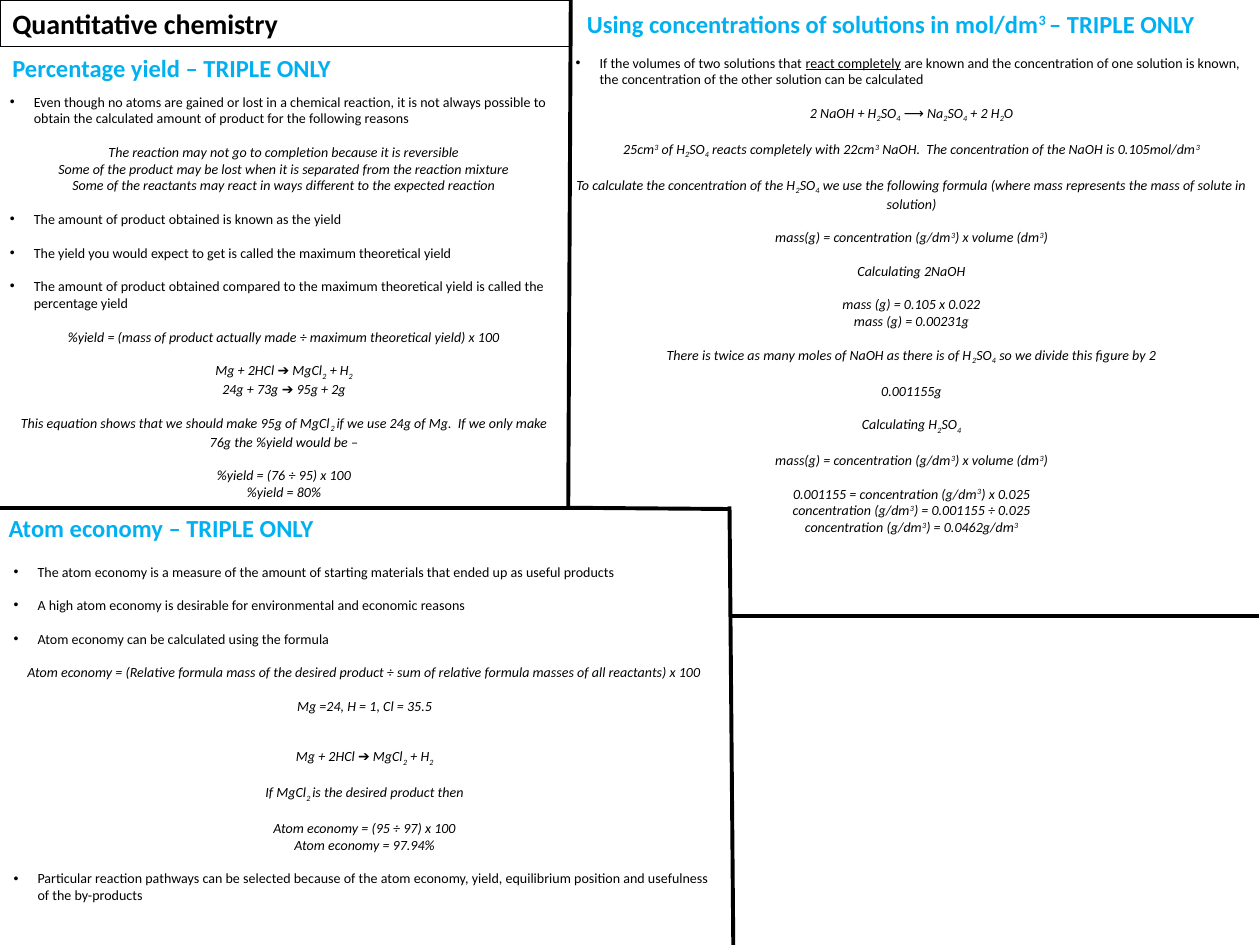
from lxml import etree
from pptx import Presentation
from pptx.dml.color import RGBColor
from pptx.enum.shapes import MSO_CONNECTOR, MSO_SHAPE
from pptx.enum.text import MSO_ANCHOR, MSO_AUTO_SIZE, PP_ALIGN
from pptx.oxml.ns import qn
from pptx.util import Inches, Pt

STRAIGHT = MSO_CONNECTOR.STRAIGHT
RECTANGLE = MSO_SHAPE.RECTANGLE
MIDDLE = MSO_ANCHOR.MIDDLE
GROW = MSO_AUTO_SIZE.SHAPE_TO_FIT_TEXT
LEFT, CENTER = PP_ALIGN.LEFT, PP_ALIGN.CENTER
BLACK = RGBColor(0x00, 0x00, 0x00)
BLUE = RGBColor(0x00, 0xB0, 0xF0)
FONT = "Calibri"
BODY_SIZE = 8
BLANK_LINE = 9.6
BASELINES = {"_": "-25000", "^": "30000"}
BULLET, FORMULA = "bullet", "formula"


def write_text(paragraph, marked_text, size, color):
    paragraph.font.name = FONT
    paragraph.font.size = Pt(size)
    paragraph.font.color.rgb = color
    for part in marked_text.split("|"):
        run = paragraph.add_run()
        if part[0] in BASELINES:
            run.text = part[1:]
            run.font._element.set("baseline", BASELINES[part[0]])
        elif part[0] == "~":
            run.text = part[1:]
            run.font.underline = True
        else:
            run.text = part


def add_text_box(left, top, width, height):
    shape = slide.shapes.add_textbox(Inches(left), Inches(top), Inches(width), Inches(height))
    shape.text_frame.word_wrap = True
    shape.text_frame.auto_size = GROW
    return shape.text_frame


presentation = Presentation()
presentation.slide_width = Inches(10)
presentation.slide_height = Inches(7.5)
slide = presentation.slides.add_slide(presentation.slide_layouts[6])

title = slide.shapes.add_shape(RECTANGLE, Inches(0), Inches(0), Inches(4.53), Inches(0.37))
title.shadow.inherit = False
title.fill.background()
title.line.color.rgb = BLACK
title.line.width = Pt(0.75)
title.text_frame.word_wrap = True
title.text_frame.auto_size = GROW
title.text_frame.vertical_anchor = MIDDLE
title_paragraph = title.text_frame.paragraphs[0]
title_paragraph.alignment = LEFT
title_paragraph.font.bold = True
write_text(title_paragraph, "Quantitative chemistry", 16, BLACK)

headings = [
    (0, 0.37, 4.53, "Percentage yield – TRIPLE ONLY"),
    (4.56, 0.02, 5.43, "Using concentrations of solutions in mol/dm|^3 |– TRIPLE ONLY"),
    (-0.03, 4.02, 4.55, "Atom economy – TRIPLE ONLY"),
]
for left, top, width, text in headings:
    paragraph = add_text_box(left, top, width, 0.34).paragraphs[0]
    paragraph.font.bold = True
    write_text(paragraph, text, 14, BLUE)

percentage_yield = [
    (0, BULLET, "Even though no atoms are gained or lost in a chemical reaction, it is not always possible to obtain the calculated amount of product for the following reasons"),
    (1, FORMULA, "The reaction may not go to completion because it is reversible"),
    (0, FORMULA, "Some of the product may be lost when it is separated from the reaction mixture"),
    (0, FORMULA, "Some of the reactants may react in ways different to the expected reaction"),
    (1, BULLET, "The amount of product obtained is known as the yield"),
    (1, BULLET, "The yield you would expect to get is called the maximum theoretical yield"),
    (1, BULLET, "The amount of product obtained compared to the maximum theoretical yield is called the percentage yield"),
    (1, FORMULA, "%yield = (mass of product actually made ÷ maximum theoretical yield) x 100"),
    (1, FORMULA, "Mg + 2HCl ➔ MgCl|_2| + H|_2"),
    (0, FORMULA, "24g + 73g ➔ 95g + 2g"),
    (1, FORMULA, "This equation shows that we should make 95g of MgCl|_2 |if we use 24g of Mg.  If we only make 76g the %yield would be –"),
    (1, FORMULA, "%yield = (76 ÷ 95) x 100"),
    (0, FORMULA, "%yield = 80%"),
]
concentrations = [
    (0, BULLET, "If the volumes of two solutions that |~react completely| are known and the concentration of one solution is known, the concentration of the other solution can be calculated"),
    (1, FORMULA, "2 NaOH + H|_2|SO|_4| ⟶ Na|_2|SO|_4| + 2 H|_2|O"),
    (1, FORMULA, "25cm|^3| of H|_2|SO|_4| reacts completely with 22cm|^3| NaOH.  The concentration of the NaOH is 0.105mol/dm|^3"),
    (1, FORMULA, "To calculate the concentration of the H|_2|SO|_4| we use the following formula (where mass represents the mass of solute in solution)"),
    (1, FORMULA, "mass(g) = concentration (g/dm|^3|) x volume (dm|^3|)"),
    (1, FORMULA, "Calculating 2NaOH"),
    (1, FORMULA, "mass (g) = 0.105 x 0.022"),
    (0, FORMULA, "mass (g) = 0.00231g"),
    (1, FORMULA, "There is twice as many moles of NaOH as there is of H|_2|SO|_4| so we divide this figure by 2"),
    (1, FORMULA, "0.001155g"),
    (1, FORMULA, "Calculating H|_2|SO|_4"),
    (1, FORMULA, "mass(g) = concentration (g/dm|^3|) x volume (dm|^3|)"),
    (1, FORMULA, "0.001155 = concentration (g/dm|^3|) x 0.025"),
    (0, FORMULA, "concentration (g/dm|^3|) = 0.001155 ÷ 0.025"),
    (0, FORMULA, "concentration (g/dm|^3|) = 0.0462g/dm|^3"),
]
atom_economy = [
    (0, BULLET, "The atom economy is a measure of the amount of starting materials that ended up as useful products"),
    (1, BULLET, "A high atom economy is desirable for environmental and economic reasons"),
    (1, BULLET, "Atom economy can be calculated using the formula"),
    (1, FORMULA, "Atom economy = (Relative formula mass of the desired product ÷ sum of relative formula masses of all reactants) x 100"),
    (1, FORMULA, "Mg =24, H = 1, Cl = 35.5"),
    (2, FORMULA, "Mg + 2HCl ➔ MgCl|_2| + H|_2"),
    (1, FORMULA, "If MgCl|_2 |is the desired product then"),
    (1, FORMULA, "Atom economy = (95 ÷ 97) x 100"),
    (0, FORMULA, "Atom economy = 97.94%"),
    (1, BULLET, "Particular reaction pathways can be selected because of the atom economy, yield, equilibrium position and usefulness of the by-products"),
]
sections = [
    (-0.02, 0.69, 4.55, 3.33, percentage_yield),
    (4.47, 0.38, 5.53, 3.87, concentrations),
    (0.01, 4.42, 5.77, 2.79, atom_economy),
]
for left, top, width, height, lines in sections:
    text_frame = add_text_box(left, top, width, height)
    for index, (gap, kind, text) in enumerate(lines):
        paragraph = text_frame.add_paragraph() if index else text_frame.paragraphs[0]
        paragraph.space_before = Pt(gap * BLANK_LINE)
        if kind == BULLET:
            properties = paragraph._p.get_or_add_pPr()
            properties.set("marL", str(Inches(0.19)))
            properties.set("indent", str(Inches(-0.19)))
            bullet_font = etree.SubElement(properties, qn("a:buFont"))
            bullet_font.set("typeface", "Arial")
            etree.SubElement(properties, qn("a:buChar")).set("char", "•")
        else:
            paragraph.alignment = CENTER
            paragraph.font.italic = True
        write_text(paragraph, text, BODY_SIZE, BLACK)

dividers = [
    (4.53, 0, 4.51, 4.02),
    (9.99, 4.89, 5.79, 4.89),
    (4.53, 4.03, -0.02, 4.03),
    (4.51, 4.03, 5.79, 4.04),
    (5.79, 4.02, 5.82, 7.5),
]
for points in dividers:
    divider = slide.shapes.add_connector(STRAIGHT, *[Inches(point) for point in points])
    divider.line.color.rgb = BLACK
    divider.line.width = Pt(2.25)
    etree.SubElement(divider._element.spPr, qn("a:effectLst"))

presentation.save("out.pptx")
